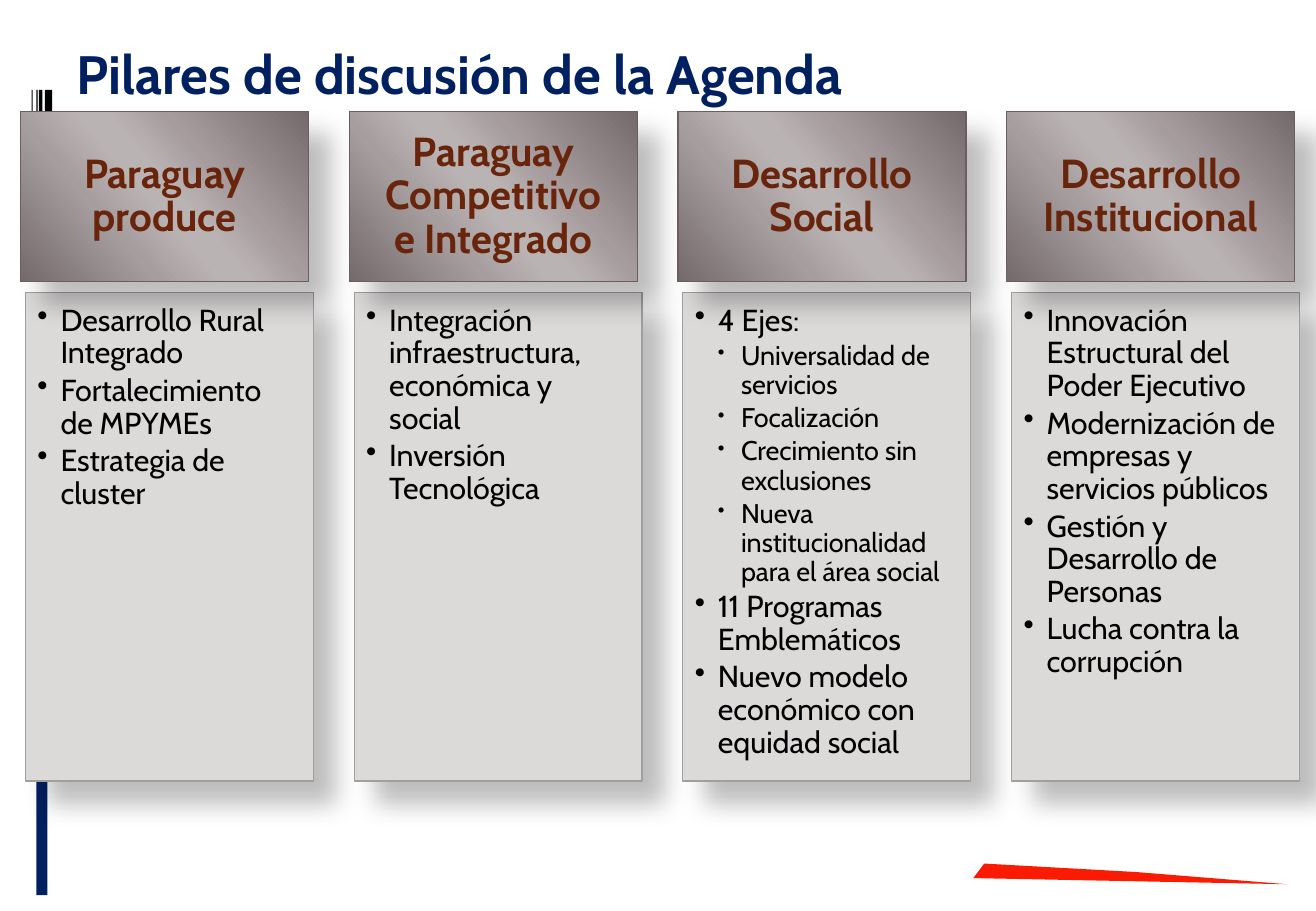
import pptx
import pptx.util
import pptx.oxml
from enum import Enum
from pptx.dml.color import RGBColor
from pptx.enum.shapes import MSO_SHAPE
from pptx.enum.text import MSO_ANCHOR, MSO_AUTO_SIZE, PP_ALIGN
from pptx.oxml.ns import nsdecls, qn
from pptx.util import Inches, Pt


class Theme:
    FONT = "Cabin"
    NAVY, RED, BLACK = "002060", "FB1B03", "000000"
    HEADING, HEADER_LINE = "69240C", "6A5F60"
    PANEL, PANEL_LINE = "DCD9D9", "A09E9E"
    METAL = [(0, "746A6B"), (33, "A69C9D"), (47, "BAB3B4"),
             (53, "BAB3B4"), (68, "A69D9E"), (100, "746A6B")]
    TITLE_SIZE, HEADING_SIZE = 32, 24
    BULLET_SIZES = {1: 18, 2: 16}


def add_box(left, top, width, height, fill, line=None):
    """Add a rectangle; one with an outline also casts a soft shadow."""
    sp = s.shapes.add_shape(MSO_SHAPE.RECTANGLE, Inches(left), Inches(top),
                            Inches(width), Inches(height))
    sp.shadow.inherit = False
    sp.fill.solid()
    sp.fill.fore_color.rgb = RGBColor.from_string(fill)
    if line is None:
        sp.line.fill.background()
        return sp
    sp.line.color.rgb = RGBColor.from_string(line)
    sp.line.width = Pt(0.75)
    sp._element.spPr.find(qn("a:effectLst")).append(pptx.oxml.parse_xml(
        f'<a:outerShdw {nsdecls("a")} blurRad="{Pt(15)}" dist="{Pt(18)}" '
        f'dir="2700000" algn="tl" rotWithShape="0"><a:srgbClr val="{Theme.BLACK}">'
        '<a:alpha val="26000"/></a:srgbClr></a:outerShdw>'))
    return sp


def style(p, size, color, bold=False):
    for r in p.runs:
        r.font.name = Theme.FONT
        r.font.size = Pt(size)
        r.font.bold = bold
        r.font.color.rgb = RGBColor.from_string(color)


PILLARS = [
    ("Paraguay produce", [
        (1, "Desarrollo Rural Integrado"),
        (1, "Fortalecimiento de MPYMEs"),
        (1, "Estrategia de cluster")]),
    ("Paraguay Competitivo e Integrado", [
        (1, "Integración infraestructura, económica y social"),
        (1, "Inversión Tecnológica")]),
    ("Desarrollo Social", [
        (1, "4 Ejes:"),
        (2, "Universalidad de servicios"),
        (2, "Focalización"),
        (2, "Crecimiento sin exclusiones"),
        (2, "Nueva institucionalidad para el área social"),
        (1, "11 Programas Emblemáticos"),
        (1, "Nuevo modelo económico con equidad social")]),
    ("Desarrollo Institucional", [
        (1, "Innovación Estructural del Poder Ejecutivo"),
        (1, "Modernización de empresas y servicios públicos"),
        (1, "Gestión y Desarrollo de Personas"),
        (1, "Lucha contra la corrupción")]),
]
COLUMN_WIDTH, COLUMN_STEP = 2.37, 2.705
INDENT = 0.19

prs = pptx.Presentation()
prs.slide_width, prs.slide_height = Inches(10.83), Inches(7.5)
s = prs.slides.add_slide(prs.slide_layouts[5])

# Title
title = s.shapes.title
title.left, title.top = Inches(0.53), Inches(0.28)
title.width, title.height = Inches(9.76), Inches(1.02)
tf = title.text_frame
tf.text = "Pilares de discusión de la Agenda"
tf.vertical_anchor = MSO_ANCHOR.TOP
tf.auto_size = MSO_AUTO_SIZE.NONE
tf.paragraphs[0].alignment = PP_ALIGN.LEFT
style(tf.paragraphs[0], Theme.TITLE_SIZE, Theme.NAVY, bold=True)

# Side decoration
add_box(0.3, 5.52, 0.09, 1.85, Theme.NAVY)
for left, width in [(0.37, 0.06), (0.32, 0.03), (0.3, 0.01), (0.26, 0.01)]:
    add_box(left, 0.74, width, 0.4, Theme.BLACK)

# Red wedge
wedge = s.shapes.build_freeform(Inches(8.1), Inches(7.11))
wedge.add_line_segments([(Inches(x), Inches(y)) for x, y in
                         [(8.01, 7.23), (10.59, 7.28), (9.35, 7.18)]], close=True)
sp = wedge.convert_to_shape()
sp.shadow.inherit = False
sp.fill.solid()
sp.fill.fore_color.rgb = RGBColor.from_string(Theme.RED)
sp.line.fill.background()

# Panels with bullets
for i, (heading, bullets) in enumerate(PILLARS):
    panel = add_box(0.21 + i * COLUMN_STEP, 2.41, COLUMN_WIDTH, 4.02,
                    Theme.PANEL, Theme.PANEL_LINE)
    tf = panel.text_frame
    tf.word_wrap = True
    tf.vertical_anchor = MSO_ANCHOR.TOP
    tf.margin_left = tf.margin_top = Inches(0.1)
    tf.margin_right, tf.margin_bottom = Inches(0.14), Inches(0.16)
    tf.text = "\n".join(text for level, text in bullets)
    for p, (level, text) in zip(tf.paragraphs, bullets):
        size = Theme.BULLET_SIZES[level]
        p.level = level - 1
        p.alignment = PP_ALIGN.LEFT
        p.line_spacing = 0.9
        p.space_after = Pt(size * 0.15)
        pPr = p._p.get_or_add_pPr()
        pPr.set("marL", str(Inches(INDENT * level)))
        pPr.set("indent", str(-Inches(INDENT)))
        if level == 2:
            pPr.append(pptx.oxml.parse_xml(
                f'<a:buSzPct {nsdecls("a")} val="74000"/>'))
        pPr.append(pptx.oxml.parse_xml(f'<a:buChar {nsdecls("a")} char="•"/>'))
        style(p, size, Theme.BLACK)

# Metallic headers, in front of the panels
for i, (heading, bullets) in enumerate(PILLARS):
    header = add_box(0.17 + i * COLUMN_STEP, 0.92, COLUMN_WIDTH, 1.4,
                     Theme.PANEL, Theme.HEADER_LINE)
    header.fill.gradient()
    header.fill.gradient_angle = 221
    stops = header._element.spPr.find(qn("a:gradFill")).find(qn("a:gsLst"))
    for stop in list(stops):
        stops.remove(stop)
    for position, color in Theme.METAL:
        stops.append(pptx.oxml.parse_xml(
            f'<a:gs {nsdecls("a")} pos="{position * 1000}">'
            f'<a:srgbClr val="{color}"/></a:gs>'))
    tf = header.text_frame
    tf.word_wrap = True
    tf.vertical_anchor = MSO_ANCHOR.MIDDLE
    tf.margin_left = tf.margin_right = Inches(0.19)
    tf.margin_top = tf.margin_bottom = Inches(0.11)
    tf.text = heading
    p = tf.paragraphs[0]
    p.alignment = PP_ALIGN.CENTER
    p.line_spacing = 0.9
    style(p, Theme.HEADING_SIZE, Theme.HEADING, bold=True)

prs.save("out.pptx")
